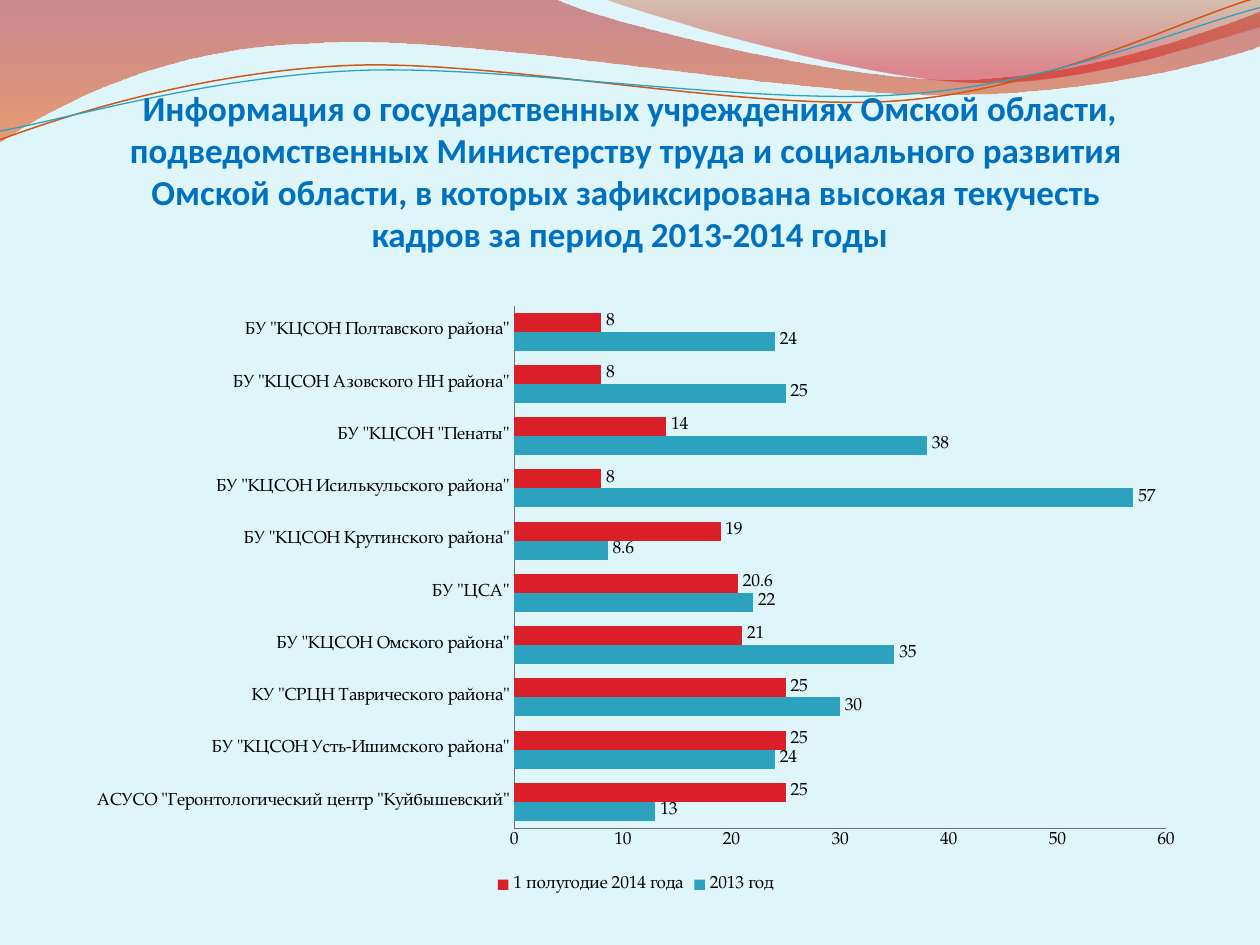
from math import cos, radians, sin

from lxml.etree import SubElement
from pptx import Presentation
from pptx.chart.data import CategoryChartData
from pptx.dml.color import RGBColor
from pptx.enum.chart import XL_CHART_TYPE as ChartType, XL_LABEL_POSITION as LabelPosition
from pptx.enum.chart import XL_LEGEND_POSITION as LegendPosition, XL_TICK_MARK as TickMark
from pptx.enum.text import MSO_ANCHOR, PP_ALIGN
from pptx.oxml.ns import qn
from pptx.util import Inches, Pt

WIDTH, HEIGHT = 10, 7.5
BACKGROUND = RGBColor(0xDE, 0xF5, 0xFA)
TITLE_BLUE = RGBColor(0x00, 0x70, 0xC0)
TEAL = RGBColor(0x2D, 0xA2, 0xBF)
RED = RGBColor(0xDA, 0x1F, 0x28)
ORANGE = RGBColor(0xCF, 0x58, 0x18)
DARK_RED = RGBColor(0xAF, 0x09, 0x11)
BRIGHT_ORANGE = RGBColor(0xEE, 0x53, 0x00)
RUST = RGBColor(0xC2, 0x44, 0x00)
BRIGHT_RED = RGBColor(0xDC, 0x00, 0x0B)
AXIS_GRAY = RGBColor(0x70, 0x70, 0x70)
BLACK = RGBColor(0, 0, 0)

TITLE = (
    "Информация о государственных учреждениях Омской области, "
    "подведомственных Министерству труда и социального развития \v"
    "Омской области, в которых зафиксирована высокая текучесть \v"
    "кадров за период 2013-2014 годы"
)
SERIES = [("2013 год", TEAL), ("1 полугодие 2014 года", RED)]
TURNOVER = [
    ('АСУСО "Геронтологический центр "Куйбышевский"', 13, 25),
    ('БУ "КЦСОН Усть-Ишимского района"', 24, 25),
    ('КУ "СРЦН Таврического района"', 30, 25),
    ('БУ "КЦСОН Омского района"', 35, 21),
    ('БУ "ЦСА"', 22, 20.6),
    ('БУ "КЦСОН Крутинского района"', 8.6, 19),
    ('БУ "КЦСОН Исилькульского района"', 57, 8),
    ('БУ "КЦСОН "Пенаты"', 38, 14),
    ('БУ "КЦСОН Азовского НН района"', 25, 8),
    ('БУ "КЦСОН Полтавского района"', 24, 8),
]

# Box (left, top, width, height) and outline on the slide, both in inches.
# One point is a straight step, three points are a Bezier step.
# Gradient stops: position, colour, opacity in percent.
WAVES = [
    ((-0.01, -0.01, 10.02, 1.14),
     [[(0, 0)], [(4.4, -0.01)], [(4.76, 0.17), (6.64, 0.63), (7.58, 0.63)],
      [(8.53, 0.63), (9.58, 0.26), (10, 0.09)], [(10.01, 0.36)],
      [(9.83, 0.44), (8.7, 0.76), (7.46, 0.75)], [(6.22, 0.75), (3.82, 0.28), (2.57, 0.34)],
      [(1.29, 0.36), (0.46, 0.83), (-0.01, 1.13)], [(0, 0)]],
     [(0, DARK_RED, 45), (1, BRIGHT_ORANGE, 55)]),
    ((4.79, -0.01, 5.21, 0.7),
     [[(4.79, -0.01)], [(5.09, 0.11), (6.82, 0.62), (7.69, 0.65)],
      [(8.56, 0.69), (9.61, 0.32), (10, 0.21)], [(10, 0)], [(4.79, -0.01)]],
     [(0, RUST, 30), (0.8, BRIGHT_RED, 45)]),
]
CURVE_ROTATION = -2.7
CURVES = [
    ((-0.02, 0.22, 10.02, 0.71),
     [[(0, 1.11)], [(0.48, 0.93), (1.58, 0.57), (2.77, 0.52)],
      [(3.95, 0.47), (5.93, 0.89), (7.13, 0.8)], [(8.33, 0.71), (9.38, 0.15), (9.98, -0.02)]],
     ORANGE, 0.85),
    ((-0.02, 0.3, 10.03, 0.58),
     [[(0, 1.04)], [(0.47, 0.96), (1.64, 0.61), (2.83, 0.56)],
      [(4.03, 0.51), (5.97, 0.84), (7.17, 0.75)], [(8.36, 0.67), (9.41, 0.21), (10, 0.06)]],
     TEAL, 0.75),
]


def set_values(target, values):
    for name, value in values.items():
        setattr(target, name, value)


def add_outline(slide, box, outline, rotation=0, close=False):
    """Add a freeform filling the box, then give its geometry the Bezier steps."""
    left, top, width, height = box
    builder = slide.shapes.build_freeform(Inches(left), Inches(top))
    builder.add_line_segments([(Inches(left + width), Inches(top + height))], close=False)
    shape = builder.convert_to_shape()
    shape.shadow.inherit = False
    shape.rotation = rotation

    geometry = next(shape.element.iter(qn("a:path")))
    for child in list(geometry):
        geometry.remove(child)
    cosine, sine = cos(radians(rotation)), sin(radians(rotation))
    for index, step in enumerate(outline):
        tag = "a:moveTo" if index == 0 else "a:lnTo" if len(step) == 1 else "a:cubicBezTo"
        command = SubElement(geometry, qn(tag))
        for x, y in step:
            dx, dy = x - left - width / 2, y - top - height / 2
            local_x = dx * cosine + dy * sine + width / 2
            local_y = dy * cosine - dx * sine + height / 2
            SubElement(command, qn("a:pt"), x=str(Inches(local_x)), y=str(Inches(local_y)))
    if close:
        SubElement(geometry, qn("a:close"))
    return shape


def add_wave(slide, box, outline, stops):
    shape = add_outline(slide, box, outline, close=True)
    shape.line.fill.background()
    shape.fill.gradient()
    shape.fill.gradient_angle = 270
    for stop, (position, color, _) in zip(shape.fill.gradient_stops, stops):
        stop.position = position
        stop.color.rgb = color
    colors = list(shape.element.spPr.iter(qn("a:srgbClr")))
    for element, (_, _, opacity) in zip(colors, stops):
        SubElement(element, qn("a:alpha"), val=str(opacity * 1000))


def add_curve(slide, box, outline, color, width):
    shape = add_outline(slide, box, outline, rotation=CURVE_ROTATION)
    shape.fill.background()
    shape.line.color.rgb = color
    shape.line.width = Pt(width)


def add_title(slide):
    box = slide.shapes.add_textbox(Inches(0.31), Inches(0.45), Inches(9.38), Inches(1.57))
    frame = box.text_frame
    set_values(frame, dict(word_wrap=True, vertical_anchor=MSO_ANCHOR.BOTTOM, margin_left=0,
                           margin_right=0, margin_top=Inches(0.05), margin_bottom=0))
    paragraph = frame.paragraphs[0]
    paragraph.text = TITLE
    paragraph.alignment = PP_ALIGN.CENTER
    for run in paragraph.runs:
        set_values(run.font, dict(name="Calibri", size=Pt(20), bold=True))
        run.font.color.rgb = TITLE_BLUE


def add_turnover_chart(slide):
    names, *columns = zip(*TURNOVER)
    data = CategoryChartData()
    data.categories = names
    for (name, _), values in zip(SERIES, columns):
        data.add_series(name, values)
    chart = slide.shapes.add_chart(ChartType.BAR_CLUSTERED, Inches(0.59), Inches(2.33),
                                   Inches(8.91), Inches(4.8), data).chart
    set_values(chart, dict(has_title=False, has_legend=True))
    set_values(chart.font, dict(name="TeX Gyre Pagella", size=Pt(10)))
    chart.font.color.rgb = BLACK
    set_values(chart.legend, dict(position=LegendPosition.BOTTOM, include_in_layout=False))

    for axis in (chart.category_axis, chart.value_axis):
        set_values(axis, dict(has_major_gridlines=False, major_tick_mark=TickMark.NONE,
                              minor_tick_mark=TickMark.NONE))
        axis.format.line.color.rgb = AXIS_GRAY
        axis.format.line.width = Pt(0.5)
    set_values(chart.value_axis, dict(minimum_scale=0, maximum_scale=60, major_unit=10))

    plot = chart.plots[0]
    set_values(plot, dict(gap_width=75, overlap=0, vary_by_categories=False))
    for series, (_, color) in zip(plot.series, SERIES):
        series.format.fill.solid()
        series.format.fill.fore_color.rgb = color
        set_values(series.data_labels, dict(show_value=True, position=LabelPosition.OUTSIDE_END))


def main():
    presentation = Presentation()
    set_values(presentation, dict(slide_width=Inches(WIDTH), slide_height=Inches(HEIGHT)))
    slide = presentation.slides.add_slide(presentation.slide_layouts[6])
    slide.background.fill.solid()
    slide.background.fill.fore_color.rgb = BACKGROUND
    for wave in WAVES:
        add_wave(slide, *wave)
    for curve in CURVES:
        add_curve(slide, *curve)
    add_title(slide)
    add_turnover_chart(slide)
    presentation.save("out.pptx")


if __name__ == "__main__":
    main()
